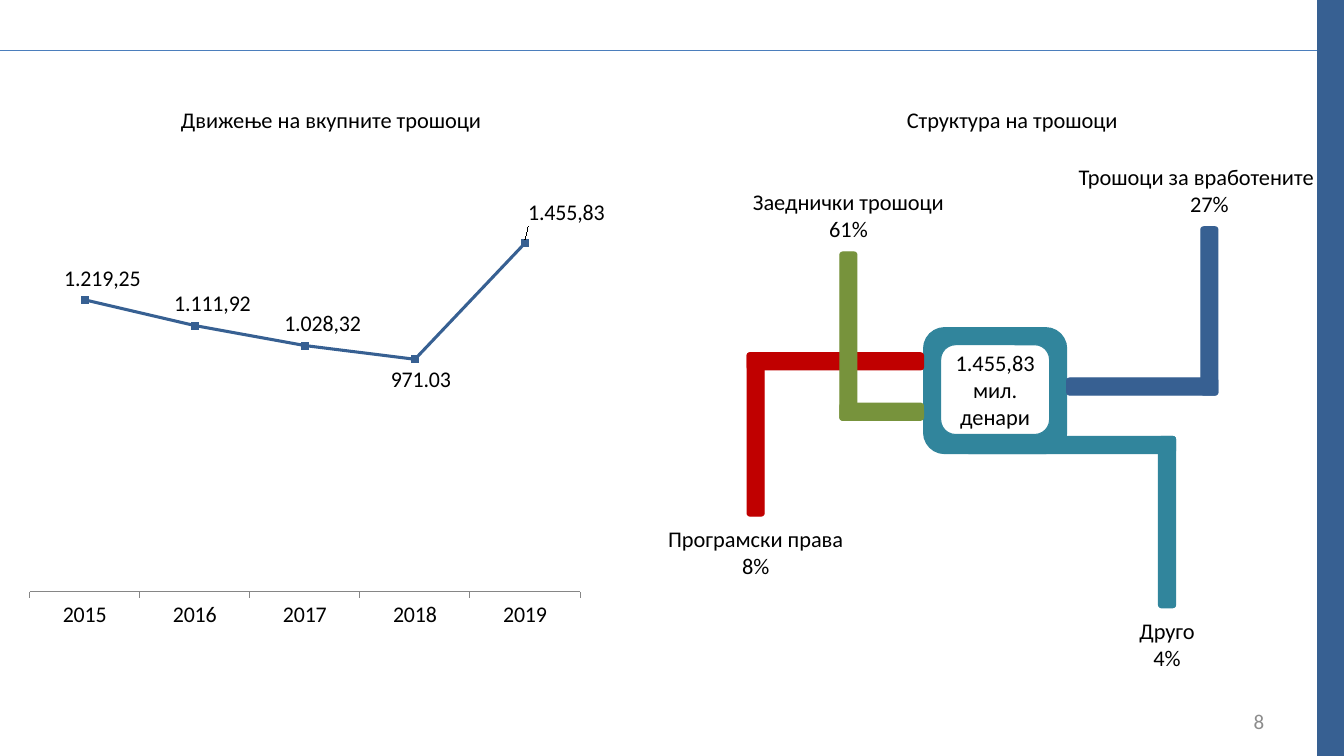
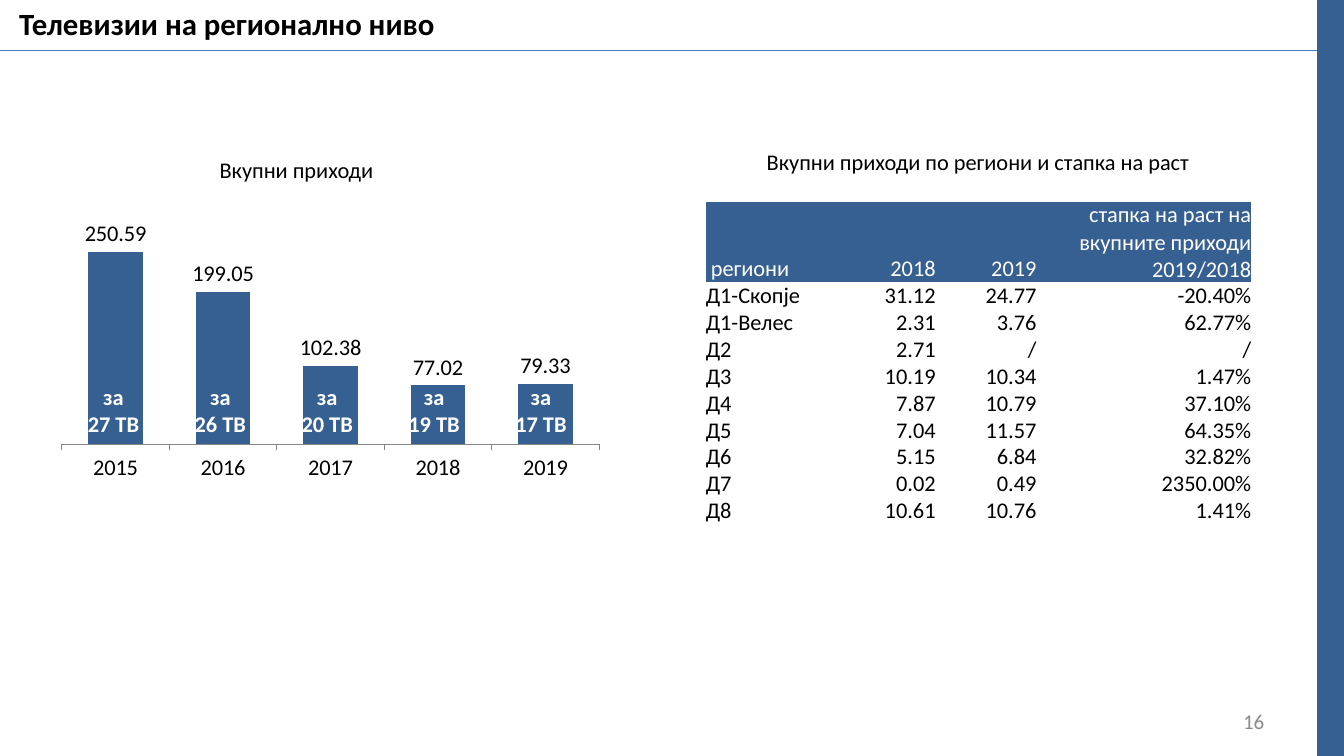
from pptx import Presentation
from pptx.chart.data import CategoryChartData
from pptx.dml.color import RGBColor
from pptx.enum.chart import XL_CHART_TYPE, XL_LABEL_POSITION, XL_MARKER_STYLE, XL_TICK_LABEL_POSITION, XL_TICK_MARK
from pptx.enum.shapes import MSO_CONNECTOR, MSO_SHAPE
from pptx.enum.text import MSO_ANCHOR, MSO_AUTO_SIZE, PP_ALIGN
from pptx.oxml.ns import qn
from pptx.oxml.xmlchemy import OxmlElement
from pptx.util import Inches, Pt

COLORS = {
    "blue": "376092", "rule": "4B7EBC", "teal": "31859C", "red": "C00000", "green": "77933C",
    "white": "FFFFFF", "black": "000000", "gray": "8C8C8C", "axis": "868686",
}
FONT = "Calibri"
BODY_SIZE = 16
NO_GRID_STYLE = "{2D5ABB26-0587-4C30-8999-92F81FD0307C}"
LEFT, CENTER, RIGHT = PP_ALIGN.LEFT, PP_ALIGN.CENTER, PP_ALIGN.RIGHT
TOP, MIDDLE, BOTTOM = MSO_ANCHOR.TOP, MSO_ANCHOR.MIDDLE, MSO_ANCHOR.BOTTOM
ABOVE, BELOW = XL_LABEL_POSITION.ABOVE, XL_LABEL_POSITION.BELOW
OUTSIDE_END = XL_LABEL_POSITION.OUTSIDE_END
LINE_MARKERS, COLUMNS = XL_CHART_TYPE.LINE_MARKERS, XL_CHART_TYPE.COLUMN_CLUSTERED
RECTANGLE, ROUNDED = MSO_SHAPE.RECTANGLE, MSO_SHAPE.ROUNDED_RECTANGLE
TITLE_ONLY, BLANK = 5, 6

YEARS = ["2015", "2016", "2017", "2018", "2019"]
COSTS = [1219.25, 1111.92, 1028.32, 971.03, 1455.83]
COST_LABELS = [
    ("1.219,25", ABOVE, 0.03, 0), ("1.111,92", ABOVE, 0.03, 0), ("1.028,32", ABOVE, 0.03, 0),
    (None, BELOW, 0.01, 0), ("1.455,83", ABOVE, 0.07, -0.02),
]
REVENUES = [250.59, 199.05, 102.38, 77.02, 79.33]
STATION_COUNTS = [27, 26, 20, 19, 17]
REGIONS = [
    ("региони", "2018", "2019", "стапка на раст на вкупните приходи 2019/2018"),
    ("Д1-Скопје", "31.12", "24.77", "-20.40%"),
    ("Д1-Велес", "2.31", "3.76", "62.77%"),
    ("Д2", "2.71", "/", "/"),
    ("Д3", "10.19", "10.34", "1.47%"),
    ("Д4", "7.87", "10.79", "37.10%"),
    ("Д5", "7.04", "11.57", "64.35%"),
    ("Д6", "5.15", "6.84", "32.82%"),
    ("Д7", "0.02", "0.49", "2350.00%"),
    ("Д8", "10.61", "10.76", "1.41%"),
]


def rgb(name):
    """Return the named palette colour."""
    return RGBColor.from_string(COLORS[name])


def inches(box):
    """Convert a sequence of numbers to lengths."""
    return [Inches(value) for value in box]


def style_font(font, size=BODY_SIZE, color="black", bold=False):
    """Apply the deck's typeface with a size, colour and weight."""
    font.name = FONT
    font.size = Pt(size)
    font.bold = bold
    font.color.rgb = rgb(color)


def write(text_frame, text, align=CENTER, anchor=TOP, size=BODY_SIZE, color="black", bold=False):
    """Fill a text frame and format all of its runs."""
    text_frame.text = text
    text_frame.word_wrap = True
    text_frame.vertical_anchor = anchor
    for paragraph in text_frame.paragraphs:
        paragraph.alignment = align
        for run in paragraph.runs:
            style_font(run.font, size, color, bold)


def set_margins(target, horizontal, vertical):
    """Set the inner margins of a text frame or table cell."""
    target.margin_left = target.margin_right = Inches(horizontal)
    target.margin_top = target.margin_bottom = Inches(vertical)


def add_text(slide, box, text, **style):
    """Add a wrapping text box."""
    shape = slide.shapes.add_textbox(*inches(box))
    write(shape.text_frame, text, **style)
    return shape


def add_block(slide, kind, box, fill, line=None, width=0.75):
    """Add a filled preset shape without a shadow."""
    shape = slide.shapes.add_shape(kind, *inches(box))
    shape.shadow.inherit = False
    shape.fill.solid()
    shape.fill.fore_color.rgb = rgb(fill)
    shape.line.color.rgb = rgb(line or fill)
    shape.line.width = Pt(width)
    return shape


def add_frame(slide, number):
    """Add the top rule, side band and page number."""
    rule = slide.shapes.add_connector(MSO_CONNECTOR.STRAIGHT, *inches((0, 0.5, 13.33, 0.5)))
    rule.line.color.rgb = rgb("rule")
    rule.line.width = Pt(0.75)
    rule.element.xpath("p:spPr")[0].append(OxmlElement("a:effectLst"))
    add_block(slide, RECTANGLE, (13.08, 0, 0.25, 7.5), "blue", width=2)
    footer = add_text(slide, (9.55, 6.95, 3.11, 0.4), str(number),
                      align=RIGHT, anchor=MIDDLE, size=15, color="gray")
    set_margins(footer.text_frame, 0.12, 0.06)


def manual_layout(settings):
    """Build a chart layout element from tag and value pairs."""
    layout = OxmlElement("c:layout")
    manual = OxmlElement("c:manualLayout")
    layout.append(manual)
    for tag, value in settings.items():
        item = OxmlElement(f"c:{tag}")
        item.set("val", str(value))
        manual.append(item)
    return layout


def add_year_chart(slide, kind, box, values, maximum, plot_box):
    """Add a one-series chart by year with a hidden value axis."""
    data = CategoryChartData()
    data.categories = YEARS
    data.add_series("Series 1", values)
    chart = slide.shapes.add_chart(kind, *inches(box), data).chart
    chart.has_title = False
    chart.has_legend = False
    style_font(chart.font)
    value_axis, category_axis = chart.value_axis, chart.category_axis
    value_axis.minimum_scale = 0
    value_axis.maximum_scale = maximum
    value_axis.has_major_gridlines = False
    value_axis.visible = False
    category_axis.major_tick_mark = XL_TICK_MARK.OUTSIDE
    category_axis.tick_label_position = XL_TICK_LABEL_POSITION.LOW
    category_axis.format.line.color.rgb = rgb("axis")
    chart.plots[0].vary_by_categories = False
    plot_area = chart.element.xpath(".//c:plotArea")[0]
    for layout in plot_area.findall(qn("c:layout")):
        plot_area.remove(layout)
    settings = {"layoutTarget": "inner", "xMode": "edge", "yMode": "edge"}
    plot_area.insert(0, manual_layout(settings | dict(zip("xywh", plot_box))))
    return chart


def add_cost_chart(slide, box):
    """Add the line of total costs with its placed labels."""
    chart = add_year_chart(slide, LINE_MARKERS, box, COSTS, 1600, (0.05, 0.07, 0.93, 0.83))
    series = chart.plots[0].series[0]
    series.smooth = False
    series.format.line.color.rgb = rgb("blue")
    series.format.line.width = Pt(2.25)
    series.marker.style = XL_MARKER_STYLE.SQUARE
    series.marker.size = 5
    series.marker.format.fill.solid()
    series.marker.format.fill.fore_color.rgb = rgb("blue")
    series.marker.format.line.color.rgb = rgb("blue")
    series.data_labels.show_value = True
    for index, (text, position, _, _) in enumerate(COST_LABELS):
        label = series.points[index].data_label
        if text:
            label.text_frame.text = text
            style_font(label.text_frame.paragraphs[0].runs[0].font)
        else:
            style_font(label.font)
        label.position = position
    for element, (_, _, x, y) in zip(chart.element.xpath(".//c:dLbl"), COST_LABELS):
        element.find(qn("c:idx")).addnext(manual_layout({"x": x, "y": y}))


def add_revenue_chart(slide, box):
    """Add the revenue columns and the station count inside each."""
    chart = add_year_chart(slide, COLUMNS, box, REVENUES, 300, (0.02, 0.04, 0.94, 0.72))
    plot = chart.plots[0]
    plot.gap_width = 96
    series = plot.series[0]
    series.format.fill.solid()
    series.format.fill.fore_color.rgb = rgb("blue")
    series.data_labels.show_value = True
    series.data_labels.position = OUTSIDE_END
    style_font(series.data_labels.font)
    left, top, _, _ = box
    for index, count in enumerate(STATION_COUNTS):
        add_text(slide, (left + 0.25 + 1.06 * index, top + 1.75, 0.75, 0.64),
                 f"за\n{count} ТВ", color="white", bold=True)


def add_arm(slide, bar, stem, side, upward, color, text, shift=0):
    """Add an elbow of two bars and the label at its free end."""
    left, top, width = bar
    thickness, gap, label_width, label_height = 0.17, 0.04, 2.58, 0.64
    stem_left = left if side == LEFT else left + width - thickness
    stem_top = top + thickness - stem if upward else top
    add_block(slide, ROUNDED, (left, top, width, thickness), color)
    add_block(slide, ROUNDED, (stem_left, stem_top, thickness, stem), color)
    label_left = stem_left + (thickness - label_width) / 2 - shift
    label_top = stem_top - gap - label_height if upward else stem_top + stem + gap
    label = add_text(slide, (label_left, label_top, label_width, label_height), text)
    if shift:
        share = label.element.xpath(".//a:p")[1]
        share.get_or_add_pPr().set("marL", str(Inches(2 * shift)))


def add_cost_structure(slide, left, top):
    """Add the hub with the total and its four cost arms."""
    add_block(slide, ROUNDED, (left, top, 1.42, 1.25), "teal")
    hub = add_block(slide, ROUNDED, (left + 0.17, top + 0.17, 1.08, 0.89), "white", "teal")
    set_margins(hub.text_frame, 0, 0)
    write(hub.text_frame, "1.455,83 мил.\nденари", anchor=MIDDLE)
    arms = [
        ((left + 0.42, top + 1.08, 2.08), 1.7, RIGHT, False, "teal", "Друго\n4%"),
        ((left + 1.42, top + 0.5, 1.5), 1.67, RIGHT, True, "blue", "Трошоци за вработените\n27%", 0.13),
        ((left - 1.75, top + 0.25, 1.75), 1.62, LEFT, False, "red", "Програмски права\n8%"),
        ((left - 0.83, top + 0.75, 0.83), 1.67, LEFT, True, "green", "Заеднички трошоци\n61%"),
    ]
    for arm in arms:
        add_arm(slide, *arm)


def add_region_table(slide, box):
    """Add the revenue table by region."""
    frame = slide.shapes.add_table(len(REGIONS), len(REGIONS[0]), *inches(box))
    frame.element.xpath(".//a:tableStyleId")[0].text = NO_GRID_STYLE
    table = frame.table
    table.horz_banding = False
    for column, width in zip(table.columns, (1.28, 1, 1, 2.13)):
        column.width = Inches(width)
    for row_index, values in enumerate(REGIONS):
        header = row_index == 0
        table.rows[row_index].height = Inches(0.8 if header else 0.26)
        for column_index, value in enumerate(values):
            cell = table.cell(row_index, column_index)
            write(cell.text_frame, value, align=RIGHT if column_index else LEFT,
                  color="white" if header else "black")
            set_margins(cell, 0, 0)
            cell.vertical_anchor = BOTTOM
            if header:
                cell.fill.solid()
                cell.fill.fore_color.rgb = rgb("blue")
            else:
                cell.fill.background()
    table.cell(0, 0).margin_left = Inches(0.05)


def build_costs_slide(presentation):
    """Build the slide on the trend and structure of costs."""
    slide = presentation.slides.add_slide(presentation.slide_layouts[BLANK])
    add_frame(slide, 8)
    add_cost_chart(slide, (0, 1.75, 6, 4.58))
    add_text(slide, (1.16, 1, 4.25, 0.37), "Движење на вкупните трошоци")
    add_text(slide, (8.08, 1, 3.92, 0.37), "Структура на трошоци")
    add_cost_structure(slide, 9.16, 3.25)


def build_regional_slide(presentation):
    """Build the slide on regional television revenue."""
    slide = presentation.slides.add_slide(presentation.slide_layouts[TITLE_ONLY])
    title = slide.shapes.title
    title.left, title.top, title.width, title.height = inches((0, 0, 4.5, 0.47))
    write(title.text_frame, "Телевизии на регионално ниво", size=22, bold=True)
    title.text_frame.auto_size = MSO_AUTO_SIZE.NONE
    add_frame(slide, 16)
    add_revenue_chart(slide, (0.5, 2, 5.67, 3.17))
    add_text(slide, (2.08, 1.5, 2, 0.37), "Вкупни приходи", align=LEFT)
    add_text(slide, (7.41, 1.42, 4.58, 0.37), "Вкупни приходи по региони и стапка на раст")
    add_region_table(slide, (7, 2, 5.41, 3.2))


def main():
    """Create and save the presentation."""
    presentation = Presentation()
    presentation.slide_width, presentation.slide_height = inches((13.33, 7.5))
    build_costs_slide(presentation)
    build_regional_slide(presentation)
    presentation.save("out.pptx")


if __name__ == "__main__":
    main()
